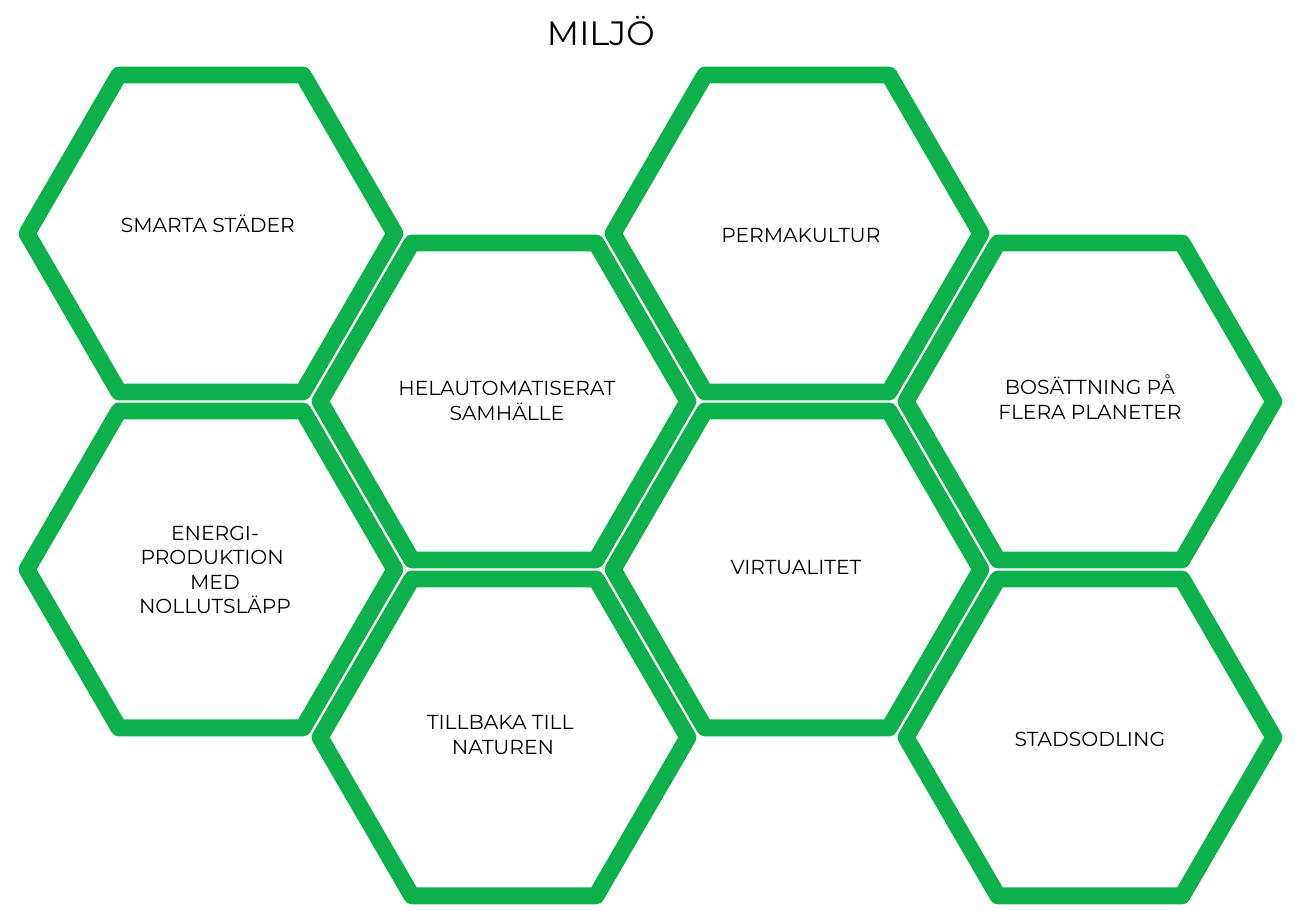
from lxml import etree
from pptx import Presentation
from pptx.dml.color import RGBColor
from pptx.enum.shapes import MSO_SHAPE
from pptx.enum.text import MSO_ANCHOR, PP_ALIGN
from pptx.oxml.ns import qn
from pptx.util import Pt

HEXAGON = MSO_SHAPE.HEXAGON
TOP, MIDDLE = MSO_ANCHOR.TOP, MSO_ANCHOR.MIDDLE
LEFT, CENTER = PP_ALIGN.LEFT, PP_ALIGN.CENTER

PX = 7526
COLORS = {"green": "0DB14B", "text": "000000"}
FONT = "Montserrat"

HEX_LEFT, HEX_TOP, HEX_W, HEX_H = 27, 75, 368, 317
COL_STEP, HALF_ROW = 293, 168
LABEL_W, LABEL_H = 236, 28

prs = Presentation()
prs.slide_width, prs.slide_height = 1316 * PX, 911 * PX
s = prs.slides.add_slide(prs.slide_layouts[6])


def add_text(x, y, w, h, lines, size, align, anchor, wrap):
    tf = s.shapes.add_textbox(x * PX, y * PX, w * PX, h * PX).text_frame
    tf.margin_left = tf.margin_right = tf.margin_top = tf.margin_bottom = 0
    tf.word_wrap = wrap
    tf.vertical_anchor = anchor
    p = tf.paragraphs[0]
    p.alignment = align
    for i, line in enumerate(lines):
        if i:
            p.add_line_break()
        r = p.add_run()
        r.text = line
        r.font.name = FONT
        r.font.size = Pt(size)
        r.font.color.rgb = RGBColor.from_string(COLORS["text"])


cells = [
    (0, 0, 90, 210, ["SMARTA STÄDER"]),
    (0, 2, 97, 555, ["ENERGI-", "PRODUKTION ", "MED", "NOLLUTSLÄPP"]),
    (1, 1, 389, 386, ["HELAUTOMATISERAT SAMHÄLLE"]),
    (1, 3, 385, 720, ["TILLBAKA TILL ", "NATUREN"]),
    (2, 0, 683, 220, ["PERMAKULTUR"]),
    (2, 2, 678, 552, ["VIRTUALITET"]),
    (3, 1, 972, 385, ["BOSÄTTNING PÅ FLERA PLANETER"]),
    (3, 3, 972, 724, ["STADSODLING"]),
]

for col, half_row, x, y, lines in cells:
    sp = s.shapes.add_shape(
        HEXAGON,
        (HEX_LEFT + col * COL_STEP) * PX,
        (HEX_TOP + half_row * HALF_ROW) * PX,
        HEX_W * PX,
        HEX_H * PX,
    )
    sp.adjustments[0] = 0.29
    sp.shadow.inherit = False
    sp.fill.background()
    sp.line.color.rgb = RGBColor.from_string(COLORS["green"])
    sp.line.width = Pt(10)
    etree.SubElement(sp.line._get_or_add_ln(), qn("a:round"))
    add_text(x, y, LABEL_W, LABEL_H, lines, 12, CENTER, MIDDLE, True)

add_text(547, 12, 224, 41, ["MILJÖ"], 20, LEFT, TOP, False)

prs.save("out.pptx")
